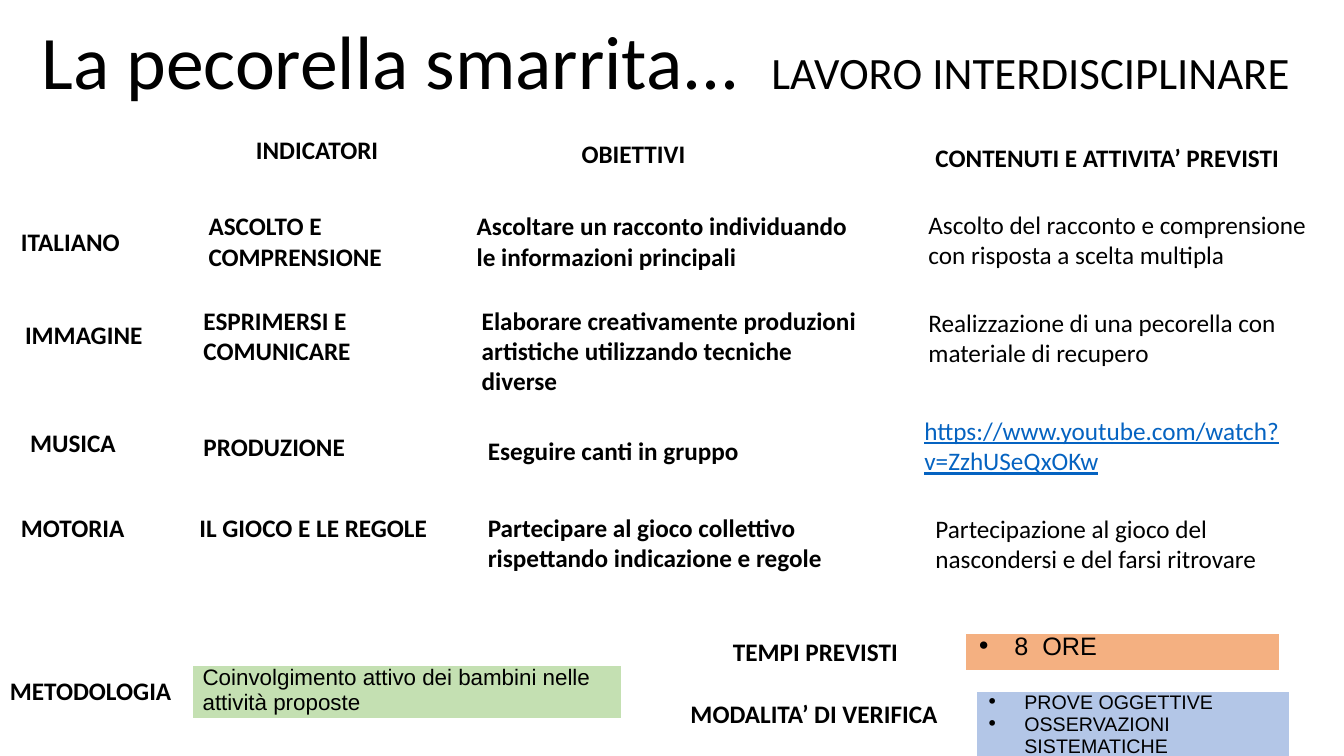
import pptx
import pptx.util
import pptx.dml.color
import pptx.enum.text
import pptx.oxml.ns
from lxml import etree

Inch, Pt = pptx.util.Inches, pptx.util.Pt
Text = pptx.enum.text

# Content
TITLE = ("La pecorella smarrita...", "LAVORO INTERDISCIPLINARE")
# Heads and labels: text, left, top, width
HEADS = [
    ("INDICATORI", 2.44, 1.28, 1.73),
    ("OBIETTIVI", 5.67, 1.32, 1.73),
    ("CONTENUTI E ATTIVITA’ PREVISTI", 9.18, 1.36, 3.61),
    ("METODOLOGIA", 0, 6.65, 2.44),
    ("TEMPI PREVISTI", 7.17, 6.26, 2.65),
    ("MODALITA’ DI VERIFICA", 6.75, 6.88, 2.65),
]
# Grid columns: left, width, style
COLS = [(0.11, 1.77, "bold"), (1.92, 2.53, "bold"),
        (4.68, 3.93, "bold"), (9.11, 4.04, "plain")]
# Grid rows: top, then cells as text, shift right, shift down
ROWS = [
    (2.04, [("ITALIANO", 0, 0.16),
            ("ASCOLTO E COMPRENSIONE", 0.05, 0),
            ("Ascoltare un racconto individuando le informazioni principali", -0.05, 0),
            ("Ascolto del racconto e comprensione con risposta a scelta multipla", 0, -0.01)]),
    (2.98, [("IMMAGINE", 0.04, 0.14),
            ("ESPRIMERSI E COMUNICARE", 0, 0),
            ("Elaborare creativamente produzioni artistiche utilizzando tecniche diverse", 0, 0),
            ("Realizzazione di una pecorella con materiale di recupero", 0, 0.02)]),
    (4.23, [("MUSICA", 0.09, -0.04),
            ("PRODUZIONE", 0, 0),
            ("Eseguire canti in gruppo", 0.06, 0.04),
            ("https://www.youtube.com/watch?v=ZzhUSeQxOKw", -0.04, -0.16)]),
    (5.03, [("MOTORIA", 0, 0),
            ("IL GIOCO E LE REGOLE", -0.04, 0),
            ("Partecipare al gioco collettivo rispettando indicazione e regole", 0.06, 0),
            ("Partecipazione al gioco del nascondersi e del farsi ritrovare", 0.07, 0.01)]),
]
# Coloured panels: lines, bulleted, place, style, fill
PANELS = [
    (["Coinvolgimento attivo dei bambini nelle attività proposte"], False,
     (1.91, 6.6, 4.26, 0.53), "method", "green"),
    (["8  ORE"], True, (9.58, 6.28, 3.11, 0.37), "time", "orange"),
    (["PROVE OGGETTIVE", "OSSERVAZIONI SISTEMATICHE"], True,
     (9.68, 6.86, 3.11, 0.47), "check", "blue"),
]

# Theme
THEME = {
    "ink": "000000", "link": "0563C1", "edge": "FFFFFF",
    "green": "C4E0B2", "orange": "F4B081", "blue": "B3C6E7",
    "styles": {
        "title": dict(name="Calibri", size=Pt(54), bold=False),
        "sub": dict(name="Calibri", size=Pt(32), bold=False),
        "bold": dict(name="Calibri", size=Pt(18), bold=True),
        "plain": dict(name="Calibri", size=Pt(18), bold=False),
        "url": dict(name="Calibri", size=Pt(18), bold=False, underline=True),
        "method": dict(name="Arial", size=Pt(16), bold=False),
        "time": dict(name="Arial", size=Pt(18), bold=False),
        "check": dict(name="Arial", size=Pt(14), bold=False),
    },
}


def color(key):
    return pptx.dml.color.RGBColor.from_string(THEME[key])


def node(parent, tag, **attrs):
    return etree.SubElement(parent, pptx.oxml.ns.qn(tag), attrs)


def apply(item, **values):
    for key, value in values.items():
        setattr(item, key, value)


def write(para, words, style):
    run = para.add_run()
    run.text = words
    apply(run.font, **THEME["styles"][style])
    run.font.color.rgb = color("link" if style == "url" else "ink")


def label(words, left, top, width, style="bold"):
    box = slide.shapes.add_textbox(*map(Inch, (left, top, width, 0.4)))
    apply(box.text_frame, word_wrap=True,
          auto_size=Text.MSO_AUTO_SIZE.SHAPE_TO_FIT_TEXT)
    write(box.text_frame.paragraphs[0], words, style)


def panel(lines, listed, place, style, fill):
    table = slide.shapes.add_table(1, 1, *map(Inch, place)).table
    apply(table, first_row=False, horz_banding=False)
    cell = table.cell(0, 0)
    apply(cell, margin_left=Inch(0.1), margin_right=Inch(0.1),
          margin_top=0, margin_bottom=0)
    props = cell._tc.get_or_add_tcPr()
    for side in "LRTB":
        line = node(props, f"a:ln{side}", w=str(Pt(1)))
        node(node(line, "a:solidFill"), "a:srgbClr", val=THEME["edge"])
    cell.fill.solid()
    cell.fill.fore_color.rgb = color(fill)
    frame = cell.text_frame
    for i, words in enumerate(lines):
        para = frame.add_paragraph() if i else frame.paragraphs[0]
        if listed:
            form = para._p.get_or_add_pPr()
            form.set("marL", str(Inch(0.38)))
            form.set("indent", str(Inch(-0.38)))
            node(node(form, "a:buClr"), "a:srgbClr", val=THEME["ink"])
            node(form, "a:buChar", char="∙")
        write(para, words, style)


# Slide
deck = pptx.Presentation()
apply(deck, slide_width=Inch(13.33), slide_height=Inch(7.5))
slide = deck.slides.add_slide(deck.slide_layouts[5])

# Title, with a tab stop before its second part
title = slide.shapes.title
apply(title, left=Inch(0.14), top=Inch(0.09), width=Inch(13.12), height=Inch(1.01))
apply(title.text_frame, word_wrap=True, margin_left=Inch(0.27),
      auto_size=Text.MSO_AUTO_SIZE.NONE, vertical_anchor=Text.MSO_ANCHOR.TOP)
head = title.text_frame.paragraphs[0]
head.alignment = Text.PP_ALIGN.LEFT
stops = node(head._p.get_or_add_pPr(), "a:tabLst")
node(stops, "a:tab", pos=str(Inch(7.24)), algn="l")
write(head, TITLE[0] + "\t", "title")
write(head, TITLE[1], "sub")

# Heads, labels and grid
for item in HEADS:
    label(*item)
for top, cells in ROWS:
    for (left, width, style), (words, right, down) in zip(COLS, cells):
        kind = "url" if words.startswith("https") else style
        label(words, left + right, top + down, width, kind)

# Panels
for item in PANELS:
    panel(*item)

deck.save("out.pptx")
